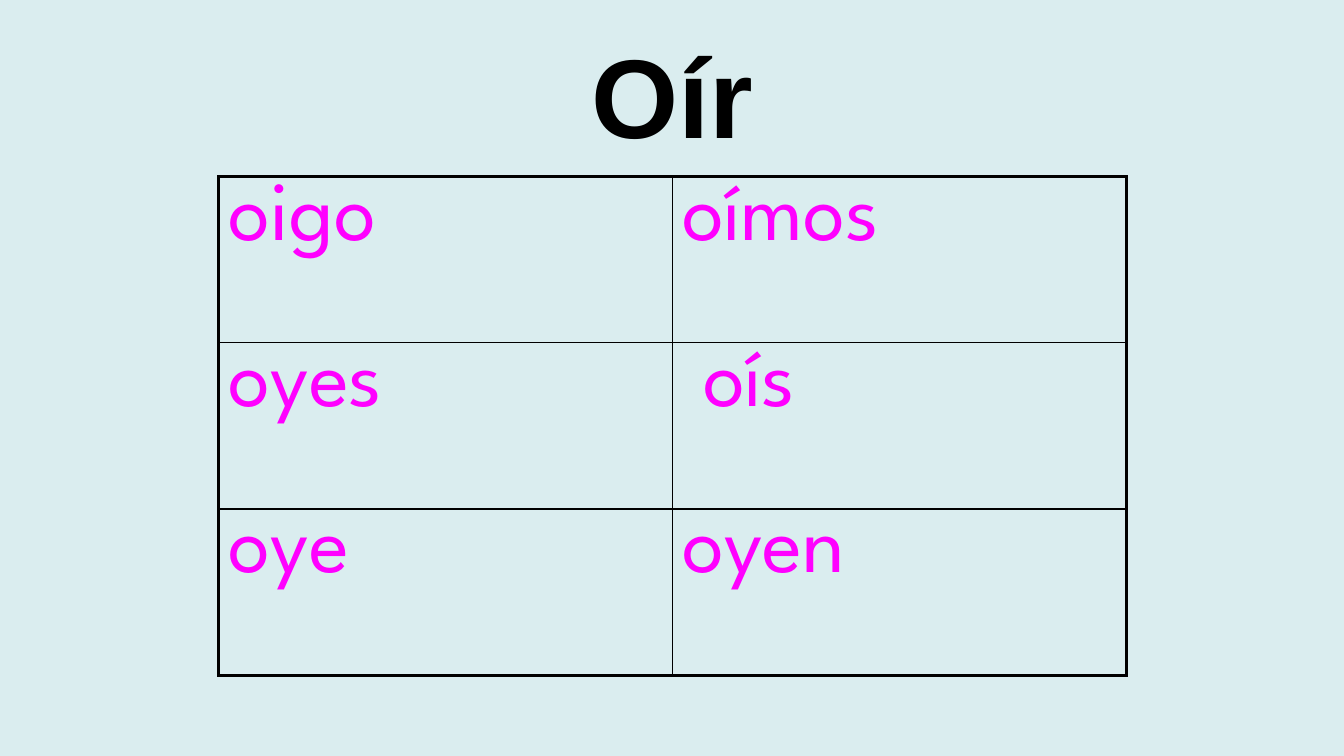
from dataclasses import dataclass

from lxml.etree import SubElement
from pptx import Presentation
from pptx.dml.color import RGBColor
from pptx.enum.text import MSO_ANCHOR, PP_ALIGN
from pptx.oxml.ns import qn
from pptx.util import Pt

PX = 9144  # 100 px to the inch


@dataclass(frozen=True)
class Theme:
    background: str = "DAEDEF"
    ink: str = "000000"
    verb: str = "FF00FF"
    title_font: str = "Arial"
    verb_font: str = "League Spartan"
    title_size: int = 80
    verb_size: int = 60
    outer_line: float = 2.25
    inner_line: float = 1


THEME = Theme()
TITLE_BOX = (67, 30, 1200, 125)
TABLE_BOX = (217, 175, 900, 495)
CONJUGATION = [
    ("oigo", "oímos"),
    ("oyes", " oís"),
    ("oye", "oyen"),
]


def to_emu(box):
    return [length * PX for length in box]


def write_text(paragraph, text, color, **font_format):
    run = paragraph.add_run()
    run.text = text
    for name, value in font_format.items():
        setattr(run.font, name, value)
    run.font.color.rgb = RGBColor.from_string(color)


def add_title(slide, box, text):
    frame = slide.shapes.add_textbox(*to_emu(box)).text_frame
    frame.word_wrap = True
    frame.vertical_anchor = MSO_ANCHOR.MIDDLE
    paragraph = frame.paragraphs[0]
    paragraph.alignment = PP_ALIGN.CENTER
    write_text(paragraph, text, THEME.ink, name=THEME.title_font,
               size=Pt(THEME.title_size), bold=True)


def set_borders(cell, widths):
    properties = cell._tc.get_or_add_tcPr()
    for side, width in widths.items():
        line = SubElement(properties, qn(f"a:ln{side}"), w=str(Pt(width)))
        fill = SubElement(line, qn("a:solidFill"))
        SubElement(fill, qn("a:srgbClr"), val=THEME.ink)


def add_conjugation(slide, box, verbs):
    last_row, last_column = len(verbs) - 1, len(verbs[0]) - 1
    table = slide.shapes.add_table(
        last_row + 1, last_column + 1, *to_emu(box)).table
    table.first_row = table.horz_banding = False

    def line_width(is_outer):
        return THEME.outer_line if is_outer else THEME.inner_line

    for row, forms in enumerate(verbs):
        for column, form in enumerate(forms):
            cell = table.cell(row, column)
            # Heavy frame outside, thin rules inside
            set_borders(cell, {
                "L": line_width(column == 0),
                "R": line_width(column == last_column),
                "T": line_width(row == 0),
                "B": line_width(row == last_row),
            })
            cell.fill.background()
            write_text(cell.text_frame.paragraphs[0], form, THEME.verb,
                       name=THEME.verb_font, size=Pt(THEME.verb_size))


def main():
    presentation = Presentation()
    presentation.slide_width, presentation.slide_height = to_emu((1333, 750))
    slide = presentation.slides.add_slide(presentation.slide_layouts[6])

    # Background
    fill = slide.background.fill
    fill.solid()
    fill.fore_color.rgb = RGBColor.from_string(THEME.background)

    # Verb and its present tense
    add_title(slide, TITLE_BOX, "Oír")
    add_conjugation(slide, TABLE_BOX, CONJUGATION)
    presentation.save("out.pptx")


if __name__ == "__main__":
    main()
